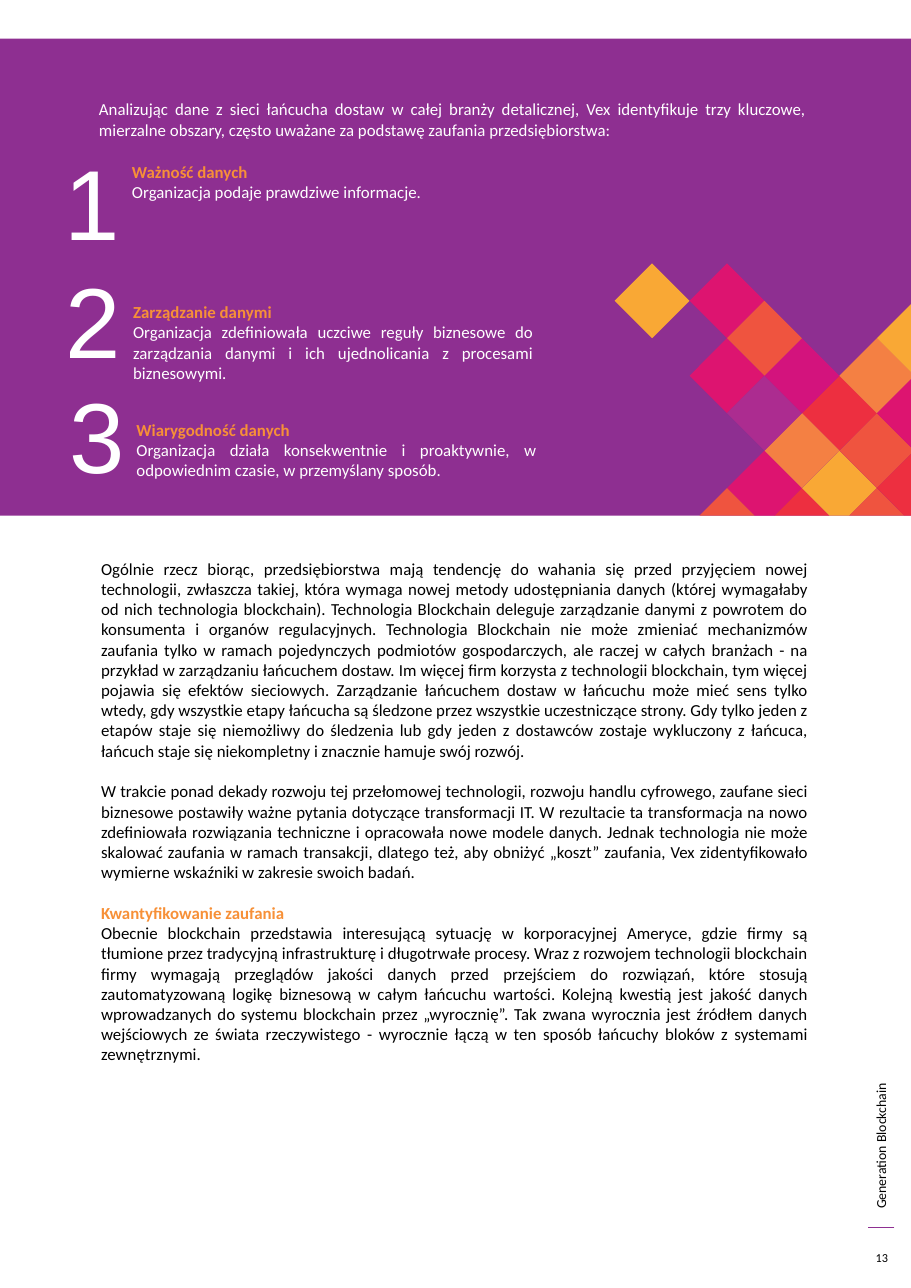
from pptx import Presentation
from pptx.dml.color import RGBColor
from pptx.enum.shapes import MSO_CONNECTOR, MSO_SHAPE
from pptx.enum.text import MSO_ANCHOR, PP_ALIGN
from pptx.util import Pt
from lxml import etree

RECTANGLE = MSO_SHAPE.RECTANGLE
STRAIGHT = MSO_CONNECTOR.STRAIGHT
LEFT, CENTER, JUSTIFY = PP_ALIGN.LEFT, PP_ALIGN.CENTER, PP_ALIGN.JUSTIFY
TOP, MIDDLE = MSO_ANCHOR.TOP, MSO_ANCHOR.MIDDLE
EFFECT_LIST = "{http://schemas.openxmlformats.org/drawingml/2006/main}effectLst"

PAGE_WIDTH, PAGE_HEIGHT = 595.44, 841.68
BAND_TOP, BAND_BOTTOM = 25.2, 336.96
PURPLE, WHITE, BLACK, ORANGE = "8E2F91", "FFFFFF", "000000", "F79037"
AMBER, PINK, CORAL, RED = "F9A835", "DD1470", "EF543F", "ED2F40"
PEACH, MAGENTA, VIOLET = "F48043", "D3137D", "AC2C90"

MOSAIC_LEFT, MOSAIC_TOP, HALF_DIAGONAL = 401.76, 172.08, 24.48
MOSAIC = [
    (5, 7, RED), (4, 6, PINK), (3, 7, CORAL), (6, 6, AMBER), (7, 5, CORAL),
    (6, 4, RED), (5, 5, PEACH), (8, 4, PINK), (8, 2, AMBER), (7, 3, PEACH),
    (1, 1, AMBER), (3, 1, PINK), (3, 3, PINK), (4, 4, VIOLET),
    (5, 3, MAGENTA), (4, 2, CORAL), (7, 7, CORAL), (8, 6, RED),
]

INTRO = (
    "Analizując dane z sieci łańcucha dostaw w całej branży detalicznej, Vex identyfikuje trzy "
    "kluczowe, mierzalne obszary, często uważane za podstawę zaufania przedsiębiorstwa:"
)
AREAS = [
    ("1", 35.3, 88.6, 79.2, 102.2, "Ważność danych",
     "Organizacja podaje prawdziwe informacje."),
    ("2", 36, 165.6, 79.9, 193.7, "Zarządzanie danymi",
     "Organizacja zdefiniowała uczciwe reguły biznesowe do zarządzania danymi i ich "
     "ujednolicania z procesami biznesowymi."),
    ("3", 38.2, 241.2, 82.1, 270.7, "Wiarygodność danych",
     "Organizacja działa konsekwentnie i proaktywnie, w odpowiednim czasie, w przemyślany sposób."),
]
ADOPTION = " ".join([
    "Ogólnie rzecz biorąc, przedsiębiorstwa mają tendencję do wahania się przed przyjęciem nowej "
    "technologii, zwłaszcza takiej, która wymaga nowej metody udostępniania danych (której "
    "wymagałaby od nich technologia blockchain).",
    "Technologia Blockchain deleguje zarządzanie danymi z powrotem do konsumenta i organów "
    "regulacyjnych.",
    "Technologia Blockchain nie może zmieniać mechanizmów zaufania tylko w ramach pojedynczych "
    "podmiotów gospodarczych, ale raczej w całych branżach - na przykład w zarządzaniu łańcuchem "
    "dostaw.",
    "Im więcej firm korzysta z technologii blockchain, tym więcej pojawia się efektów sieciowych.",
    "Zarządzanie łańcuchem dostaw w łańcuchu może mieć sens tylko wtedy, gdy wszystkie etapy "
    "łańcucha są śledzone przez wszystkie uczestniczące strony.",
    "Gdy tylko jeden z etapów staje się niemożliwy do śledzenia lub gdy jeden z dostawców zostaje "
    "wykluczony z łańcuca, łańcuch staje się niekompletny i znacznie hamuje swój rozwój.",
])
TRANSFORMATION = (
    "W trakcie ponad dekady rozwoju tej przełomowej technologii, rozwoju handlu cyfrowego, zaufane "
    "sieci biznesowe postawiły ważne pytania dotyczące transformacji IT. W rezultacie ta "
    "transformacja na nowo zdefiniowała rozwiązania techniczne i opracowała nowe modele danych. "
    "Jednak technologia nie może skalować zaufania w ramach transakcji, dlatego też, aby obniżyć "
    "„koszt” zaufania, Vex zidentyfikowało wymierne wskaźniki w zakresie swoich badań."
)
QUANTIFYING = (
    "Obecnie blockchain przedstawia interesującą sytuację w korporacyjnej Ameryce, gdzie firmy są "
    "tłumione przez tradycyjną infrastrukturę i długotrwałe procesy. Wraz z rozwojem technologii "
    "blockchain firmy wymagają przeglądów jakości danych przed przejściem do rozwiązań, które "
    "stosują zautomatyzowaną logikę biznesową w całym łańcuchu wartości. Kolejną kwestią jest "
    "jakość danych wprowadzanych do systemu blockchain przez „wyrocznię”. Tak zwana wyrocznia jest "
    "źródłem danych wejściowych ze świata rzeczywistego - wyrocznie łączą w ten sposób łańcuchy "
    "bloków z systemami zewnętrznymi."
)


def color(value):
    return RGBColor.from_string(value)


def clip(points, axis, limit):
    kept = []
    for start, end in zip(points, points[1:] + points[:1]):
        if start[axis] <= limit:
            kept.append(start)
        if (start[axis] < limit < end[axis]) or (end[axis] < limit < start[axis]):
            share = (limit - start[axis]) / (end[axis] - start[axis])
            kept.append(tuple(a + share * (b - a) for a, b in zip(start, end)))
    return kept


class Painter:
    def __init__(self, page, font="Calibri", size=11):
        self.page = page
        self.font = font
        self.size = size

    def paint(self, shape, fill):
        shape.shadow.inherit = False
        shape.fill.solid()
        shape.fill.fore_color.rgb = color(fill)
        shape.line.fill.background()

    def rectangle(self, left, top, width, height, fill):
        shape = self.page.shapes.add_shape(RECTANGLE, Pt(left), Pt(top), Pt(width), Pt(height))
        self.paint(shape, fill)

    def polygon(self, points, fill):
        corners = [(Pt(x), Pt(y)) for x, y in points]
        builder = self.page.shapes.build_freeform(*corners[0])
        builder.add_line_segments(corners[1:], close=True)
        self.paint(builder.convert_to_shape(), fill)

    def line(self, left, top, right, bottom, stroke, width):
        connector = self.page.shapes.add_connector(
            STRAIGHT, Pt(left), Pt(top), Pt(right), Pt(bottom))
        connector.line.color.rgb = color(stroke)
        connector.line.width = Pt(width)
        etree.SubElement(connector._element.spPr, EFFECT_LIST)

    def text(self, left, top, width, height, paragraphs, align=LEFT, anchor=TOP,
             font=None, size=None, rotation=0):
        box = self.page.shapes.add_textbox(Pt(left), Pt(top), Pt(width), Pt(height))
        box.rotation = rotation
        frame = box.text_frame
        frame.word_wrap = True
        frame.vertical_anchor = anchor
        for index, (words, ink, bold, gap) in enumerate(paragraphs):
            para = frame.add_paragraph() if index else frame.paragraphs[0]
            para.alignment = align
            para.space_after = Pt(gap)
            span = para.add_run()
            span.text = words
            span.font.name = font or self.font
            span.font.size = Pt(size or self.size)
            span.font.bold = bold
            span.font.color.rgb = color(ink)


def main():
    deck = Presentation()
    deck.slide_width, deck.slide_height = Pt(PAGE_WIDTH), Pt(PAGE_HEIGHT)
    painter = Painter(deck.slides.add_slide(deck.slide_layouts[6]))

    painter.text(450.7, 663.1, 249.8, 18, [("Generation Blockchain", BLACK, False, 0)],
                 size=9, rotation=270)
    painter.line(584.6, 802.1, 567.4, 802.1, PURPLE, 0.75)
    painter.text(561.6, 803.5, 29.5, 36.7, [("13", BLACK, False, 0)], CENTER, MIDDLE, size=8)

    painter.rectangle(0, BAND_TOP, PAGE_WIDTH, BAND_BOTTOM - BAND_TOP, PURPLE)
    painter.text(57.6, 61.2, 476.6, 36, [(INTRO, WHITE, False, 0)], JUSTIFY)

    for column, row, fill in MOSAIC:
        x = MOSAIC_LEFT + column * HALF_DIAGONAL
        y = MOSAIC_TOP + row * HALF_DIAGONAL
        diamond = [(x, y - HALF_DIAGONAL), (x + HALF_DIAGONAL, y),
                   (x, y + HALF_DIAGONAL), (x - HALF_DIAGONAL, y)]
        painter.polygon(clip(clip(diamond, 0, PAGE_WIDTH), 1, BAND_BOTTOM), fill)

    for number, number_left, number_top, left, top, heading, detail in AREAS:
        painter.text(number_left, number_top, 51.8, 85.7, [(number, WHITE, False, 0)],
                     font="Arial", size=65)
        painter.text(left, top, 275.8, 49.7,
                     [(heading, ORANGE, True, 0), (detail, WHITE, False, 0)], JUSTIFY)

    painter.text(59, 361.4, 476.6, 419.8, [
        (ADOPTION, BLACK, False, 13.4),
        (TRANSFORMATION, BLACK, False, 13.4),
        ("Kwantyfikowanie zaufania", ORANGE, True, 0),
        (QUANTIFYING, BLACK, False, 0),
    ], JUSTIFY)

    deck.save("out.pptx")


if __name__ == "__main__":
    main()
